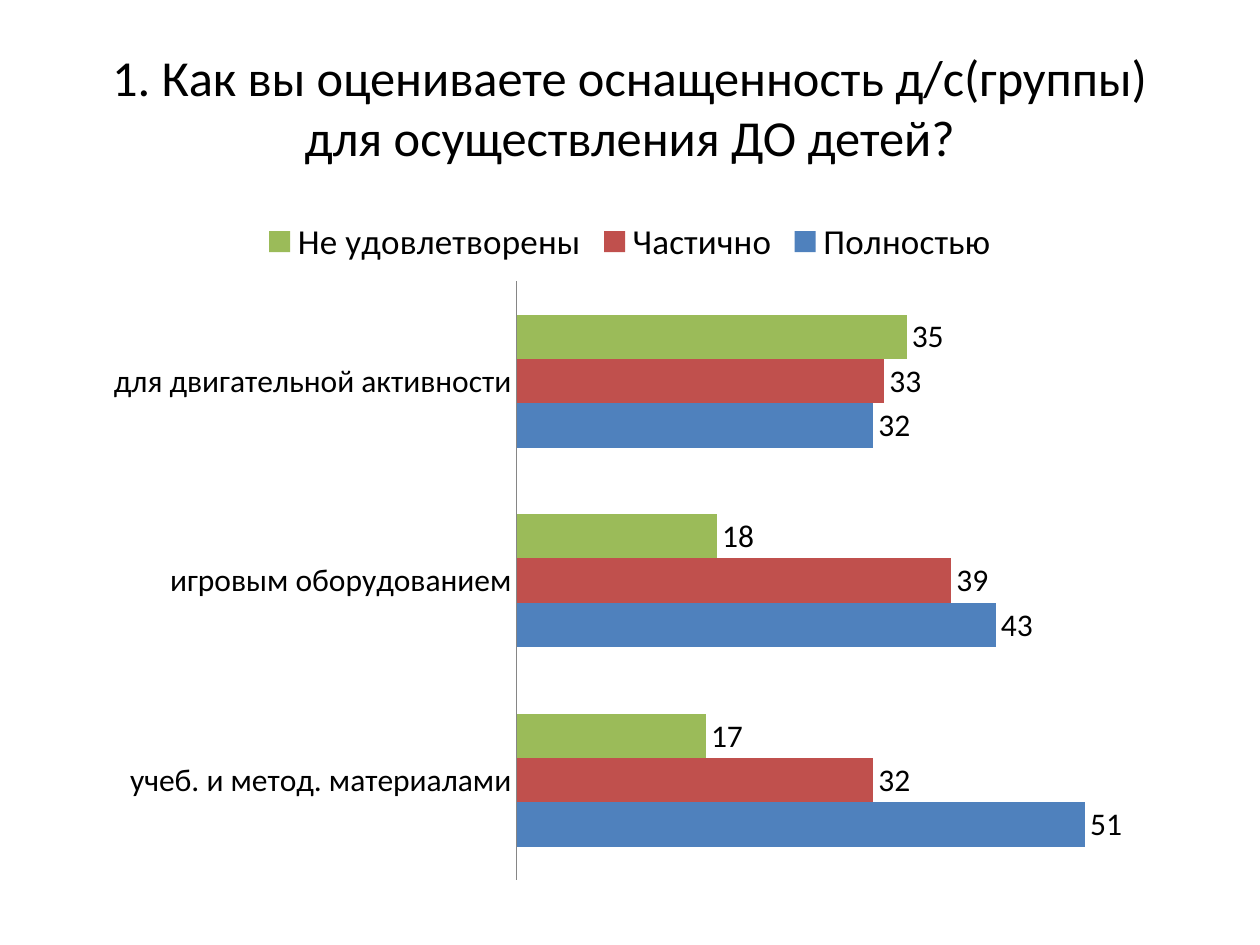
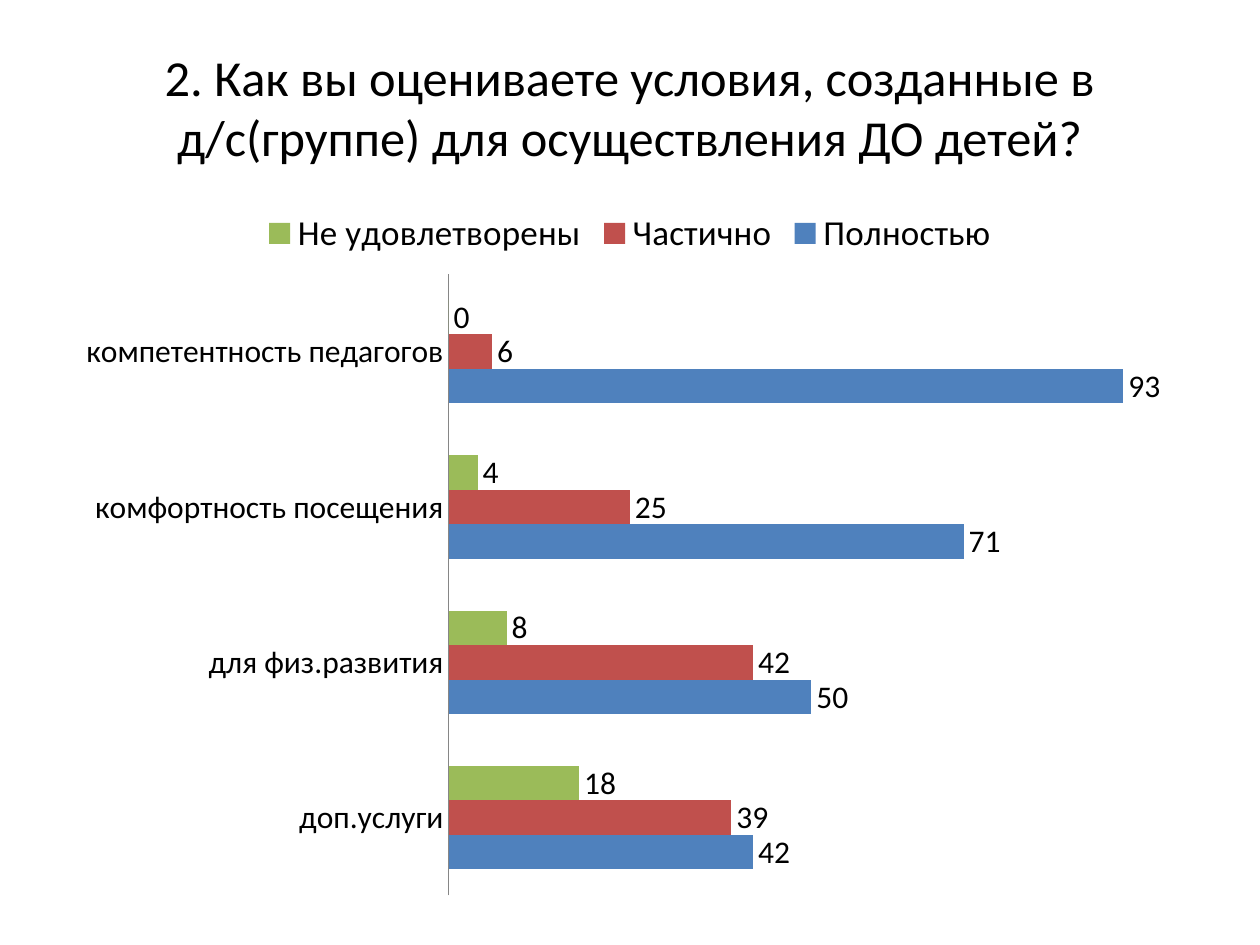
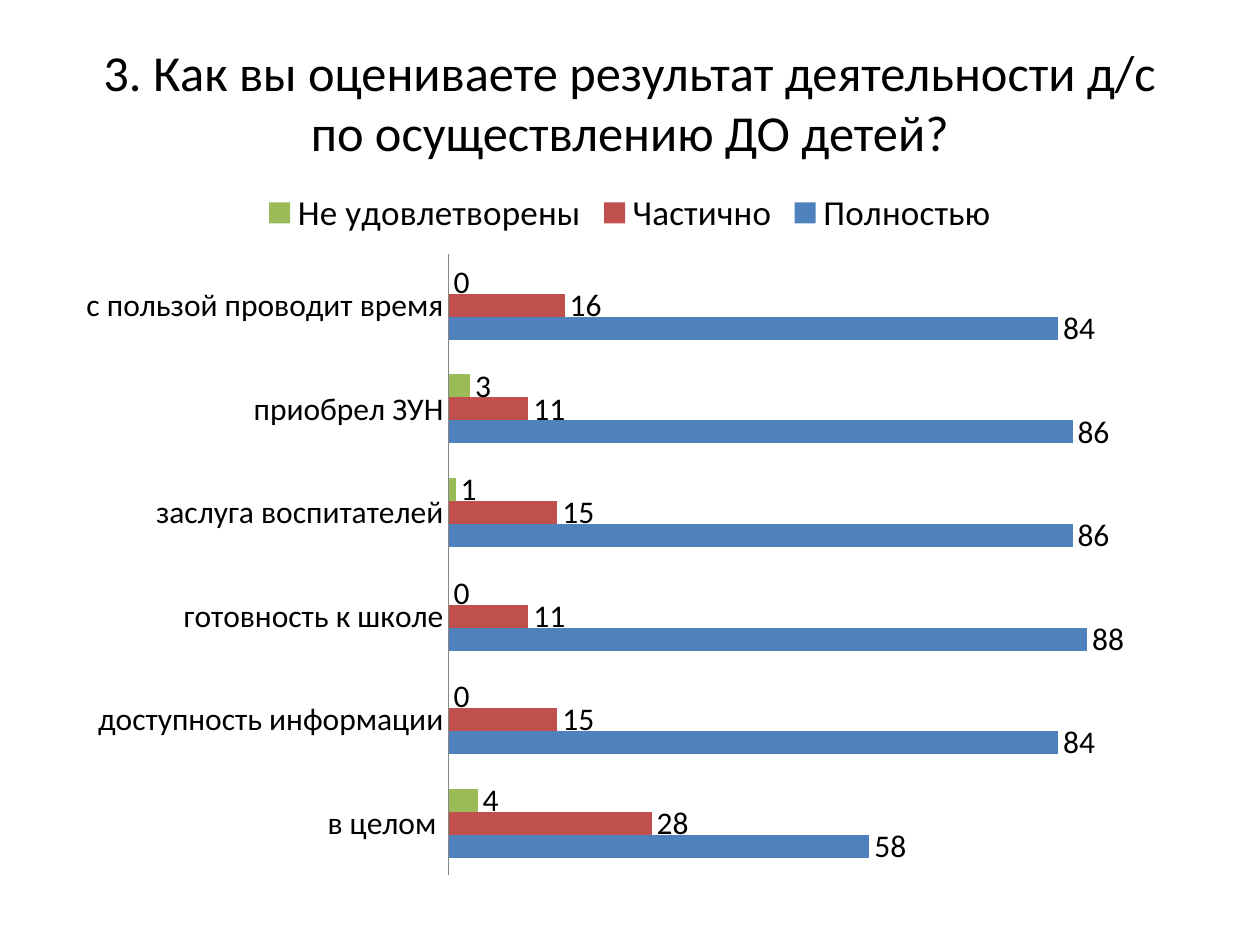
from dataclasses import dataclass

from lxml.etree import SubElement
from pptx import Presentation
from pptx.chart.data import CategoryChartData
from pptx.dml.color import RGBColor
from pptx.enum.chart import (XL_CHART_TYPE, XL_LABEL_POSITION,
                             XL_LEGEND_POSITION, XL_TICK_MARK)
from pptx.enum.text import MSO_ANCHOR, MSO_AUTO_SIZE, PP_ALIGN
from pptx.oxml.ns import qn
from pptx.util import Cm, Pt


@dataclass(frozen=True)
class Theme:
    font: str = "Calibri"
    ink: str = "000000"
    axis: str = "868686"
    bars: tuple = ("4F81BD", "C0504D", "9BBB59")
    title: float = 28.8
    legend: float = 20
    label: float = 18


GRADES = ("Полностью", "Частично", "Не удовлетворены")
LEFT, WIDTH = 1.27, 22.86

# Each answer row holds a category and its values in the order of GRADES.
POLLS = [
    dict(
        title="1. Как вы оцениваете оснащенность д/с(группы) для осуществления ДО детей?",
        head=2.77, top=4.11, height=14.2, limit=60,
        plot=(0.4, 0.11, 0.59, 0.85),
        rows=[
            ("учеб. и метод. материалами", 51, 32, 17),
            ("игровым оборудованием", 43, 39, 18),
            ("для двигательной активности", 32, 33, 35),
        ],
    ),
    dict(
        title="2. Как вы оцениваете условия, созданные в д/с(группе) для осуществления ДО детей?",
        head=2.77, top=3.94, height=14.4, limit=100,
        plot=(0.34, 0.11, 0.64, 0.87),
        rows=[
            ("доп.услуги", 42, 39, 18),
            ("для физ.развития", 50, 42, 8),
            ("комфортность посещения", 71, 25, 4),
            ("компетентность педагогов", 93, 6, 0),
        ],
    ),
    dict(
        title="3. Как вы оцениваете результат деятельности д/с по осуществлению ДО детей?",
        head=2.57, top=3.53, height=14.4, limit=100,
        plot=(0.34, 0.11, 0.64, 0.87),
        rows=[
            ("в целом ", 58, 28, 4),
            ("доступность информации", 84, 15, 0),
            ("готовность к школе", 88, 11, 0),
            ("заслуга воспитателей", 86, 15, 1),
            ("приобрел ЗУН", 86, 11, 3),
            ("с пользой проводит время", 84, 16, 0),
        ],
    ),
]


class Deck:
    def __init__(self, theme):
        self.theme = theme
        self.prs = Presentation()
        self.prs.slide_width = Cm(25.4)
        self.prs.slide_height = Cm(19.05)
        self.slide = None

    def add(self):
        self.slide = self.prs.slides.add_slide(self.prs.slide_layouts[5])

    def style(self, font, size):
        font.name = self.theme.font
        font.size = Pt(size)
        font.color.rgb = RGBColor.from_string(self.theme.ink)

    def title(self, text, height):
        shape = self.slide.shapes.title
        shape.left, shape.top = Cm(LEFT), Cm(0.76)
        shape.width, shape.height = Cm(WIDTH), Cm(height)
        frame = shape.text_frame
        frame.word_wrap = True
        frame.auto_size = MSO_AUTO_SIZE.NONE
        frame.vertical_anchor = MSO_ANCHOR.MIDDLE
        para = frame.paragraphs[0]
        para.alignment = PP_ALIGN.CENTER
        run = para.add_run()
        run.text = text
        self.style(run.font, self.theme.title)

    def bars(self, rows, top, height, limit, plot):
        names, *columns = zip(*rows)
        data = CategoryChartData(number_format="General")
        data.categories = names
        for grade, values in zip(GRADES, columns):
            data.add_series(grade, values)
        chart = self.slide.shapes.add_chart(
            XL_CHART_TYPE.BAR_CLUSTERED, Cm(LEFT), Cm(top),
            Cm(WIDTH), Cm(height), data).chart
        chart.has_title = False
        self.style(chart.font, self.theme.label)
        self.legend(chart)
        self.axes(chart, limit)
        self.series(chart.plots[0])
        self.place(chart, plot)

    def legend(self, chart):
        chart.has_legend = True
        chart.legend.position = XL_LEGEND_POSITION.TOP
        chart.legend.include_in_layout = False
        self.style(chart.legend.font, self.theme.legend)

    def axes(self, chart, limit):
        scale = chart.value_axis
        scale.minimum_scale, scale.maximum_scale = 0, limit
        scale.has_major_gridlines = False
        scale.visible = False
        axis = chart.category_axis
        axis.major_tick_mark = axis.minor_tick_mark = XL_TICK_MARK.NONE
        axis.format.line.width = Pt(0.75)
        axis.format.line.color.rgb = RGBColor.from_string(self.theme.axis)

    def series(self, plot):
        plot.vary_by_categories = False
        plot.gap_width = 150
        plot.overlap = 0
        for item, color in zip(plot.series, self.theme.bars):
            item.invert_if_negative = False
            item.format.fill.solid()
            item.format.fill.fore_color.rgb = RGBColor.from_string(color)
            labels = item.data_labels
            labels.show_value = True
            labels.position = XL_LABEL_POSITION.OUTSIDE_END
            self.style(labels.font, self.theme.label)

    def place(self, chart, plot):
        """Fix the inner plot area by fractions of the chart: x, y, w, h."""
        area = chart.element.find(".//" + qn("c:plotArea"))
        layout = area.find(qn("c:layout"))
        if layout is None:
            layout = SubElement(area, qn("c:layout"))
            area.insert(0, layout)
        manual = SubElement(layout, qn("c:manualLayout"))
        parts = [("layoutTarget", "inner"), ("xMode", "edge"), ("yMode", "edge")]
        for tag, value in parts + list(zip("xywh", plot)):
            SubElement(manual, qn("c:" + tag)).set("val", str(value))


def main():
    deck = Deck(Theme())
    for poll in POLLS:
        deck.add()
        deck.title(poll["title"], poll["head"])
        deck.bars(poll["rows"], poll["top"], poll["height"],
                  poll["limit"], poll["plot"])
    deck.prs.save("out.pptx")


if __name__ == "__main__":
    main()
